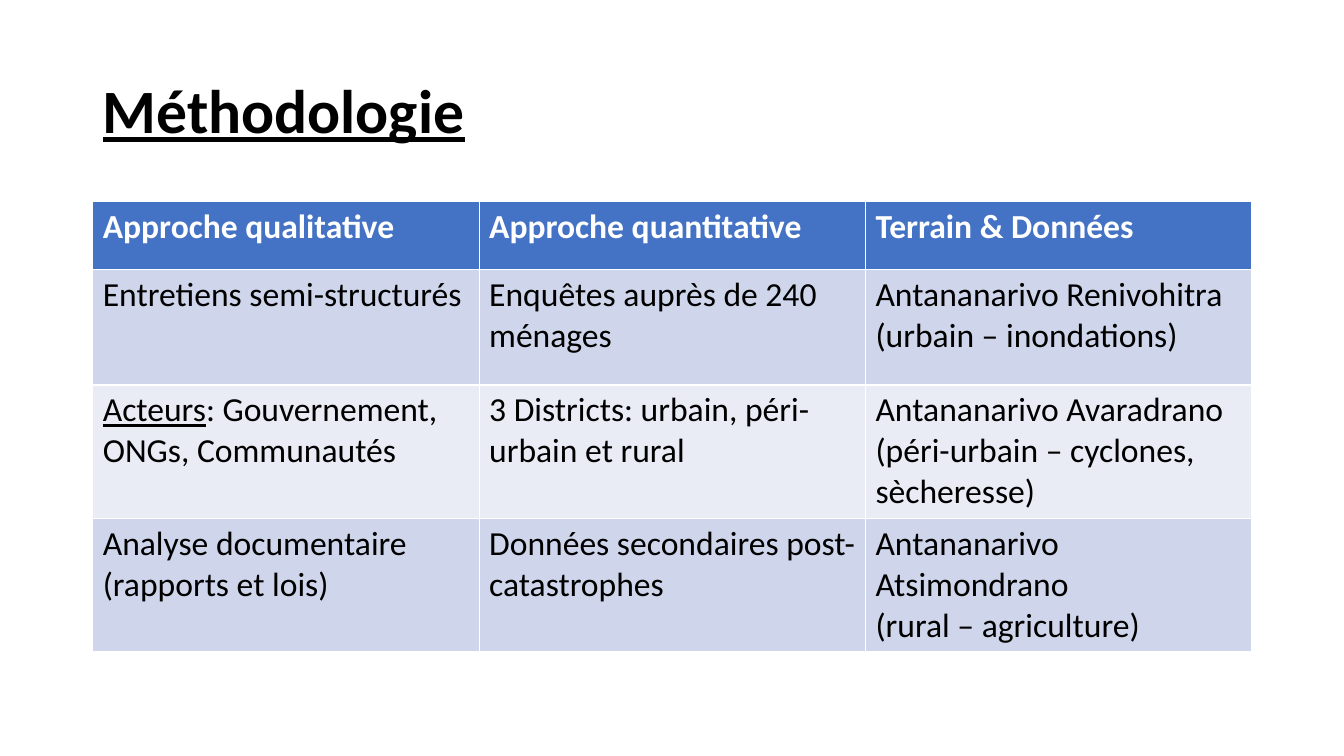
from pptx import Presentation
from pptx.dml.color import RGBColor
from pptx.enum.text import MSO_ANCHOR, PP_ALIGN
from pptx.util import Pt

TITLE = "Méthodologie"
HEADINGS = ["Approche qualitative", "Approche quantitative", "Terrain & Données"]
ROWS = [
    [
        ["Entretiens semi-structurés"],
        ["Enquêtes auprès de 240 ménages"],
        ["Antananarivo Renivohitra", "(urbain – inondations)"],
    ],
    [
        ["Acteurs: Gouvernement, ONGs, Communautés"],
        ["3 Districts: urbain, péri-urbain et rural"],
        ["Antananarivo Avaradrano", "(péri-urbain – cyclones, sècheresse)"],
    ],
    [
        ["Analyse documentaire (rapports et lois)"],
        ["Données secondaires post-catastrophes"],
        ["Antananarivo Atsimondrano", "(rural – agriculture)"],
    ],
]
UNDERLINED_LABEL = "Acteurs"

BLACK = RGBColor(0x00, 0x00, 0x00)
WHITE = RGBColor(0xFF, 0xFF, 0xFF)
HEADER_BLUE = RGBColor(0x44, 0x72, 0xC4)
BAND_DARK = RGBColor(0xCF, 0xD5, 0xEA)
BAND_LIGHT = RGBColor(0xE9, 0xEB, 0xF5)

TITLE_FORMAT = {"name": "Calibri", "size": Pt(44), "bold": True, "underline": True}
HEADING_FORMAT = {"name": "Calibri", "size": Pt(24), "bold": True}
BODY_FORMAT = {"name": "Calibri", "size": Pt(24), "bold": False}
LABEL_FORMAT = {**BODY_FORMAT, "underline": True}

LEFT, WIDTH = 66.24, 828
TITLE_TOP, TITLE_HEIGHT = 28.8, 104.4
TABLE_TOP, HEADER_HEIGHT, ROW_HEIGHT = 144, 48.24, 82.8


def set_attributes(target, values):
    for name, value in values.items():
        setattr(target, name, value)


def add_span(para, text, values, color):
    span = para.add_run()
    span.text = text
    set_attributes(span.font, values)
    span.font.color.rgb = color


def add_title(page):
    title = page.shapes.title
    set_attributes(title, {
        "left": Pt(LEFT), "top": Pt(TITLE_TOP),
        "width": Pt(WIDTH), "height": Pt(TITLE_HEIGHT),
    })
    set_attributes(title.text_frame, {
        "word_wrap": True, "vertical_anchor": MSO_ANCHOR.MIDDLE,
    })
    para = title.text_frame.paragraphs[0]
    set_attributes(para, {"alignment": PP_ALIGN.LEFT, "line_spacing": 0.9})
    add_span(para, TITLE, TITLE_FORMAT, BLACK)


def fill_cell(cell, lines, values, color, background):
    cell.fill.solid()
    cell.fill.fore_color.rgb = background
    frame = cell.text_frame
    for index, line in enumerate(lines):
        para = frame.add_paragraph() if index else frame.paragraphs[0]
        if line.startswith(UNDERLINED_LABEL):
            add_span(para, UNDERLINED_LABEL, LABEL_FORMAT, color)
            line = line.removeprefix(UNDERLINED_LABEL)
        add_span(para, line, values, color)


def add_method_table(page):
    height = HEADER_HEIGHT + ROW_HEIGHT * len(ROWS)
    table = page.shapes.add_table(
        len(ROWS) + 1, len(HEADINGS), Pt(LEFT), Pt(TABLE_TOP), Pt(WIDTH), Pt(height)
    ).table
    for column in table.columns:
        column.width = Pt(WIDTH / len(HEADINGS))
    for index, row in enumerate(table.rows):
        row.height = Pt(ROW_HEIGHT if index else HEADER_HEIGHT)
    for column, heading in enumerate(HEADINGS):
        fill_cell(table.cell(0, column), [heading], HEADING_FORMAT, WHITE, HEADER_BLUE)
    for row, cells in enumerate(ROWS, 1):
        band = BAND_DARK if row % 2 else BAND_LIGHT
        for column, lines in enumerate(cells):
            fill_cell(table.cell(row, column), lines, BODY_FORMAT, BLACK, band)


def main():
    deck = Presentation()
    set_attributes(deck, {"slide_width": Pt(960), "slide_height": Pt(540)})
    page = deck.slides.add_slide(deck.slide_layouts[5])
    add_title(page)
    add_method_table(page)
    deck.save("out.pptx")


if __name__ == "__main__":
    main()
